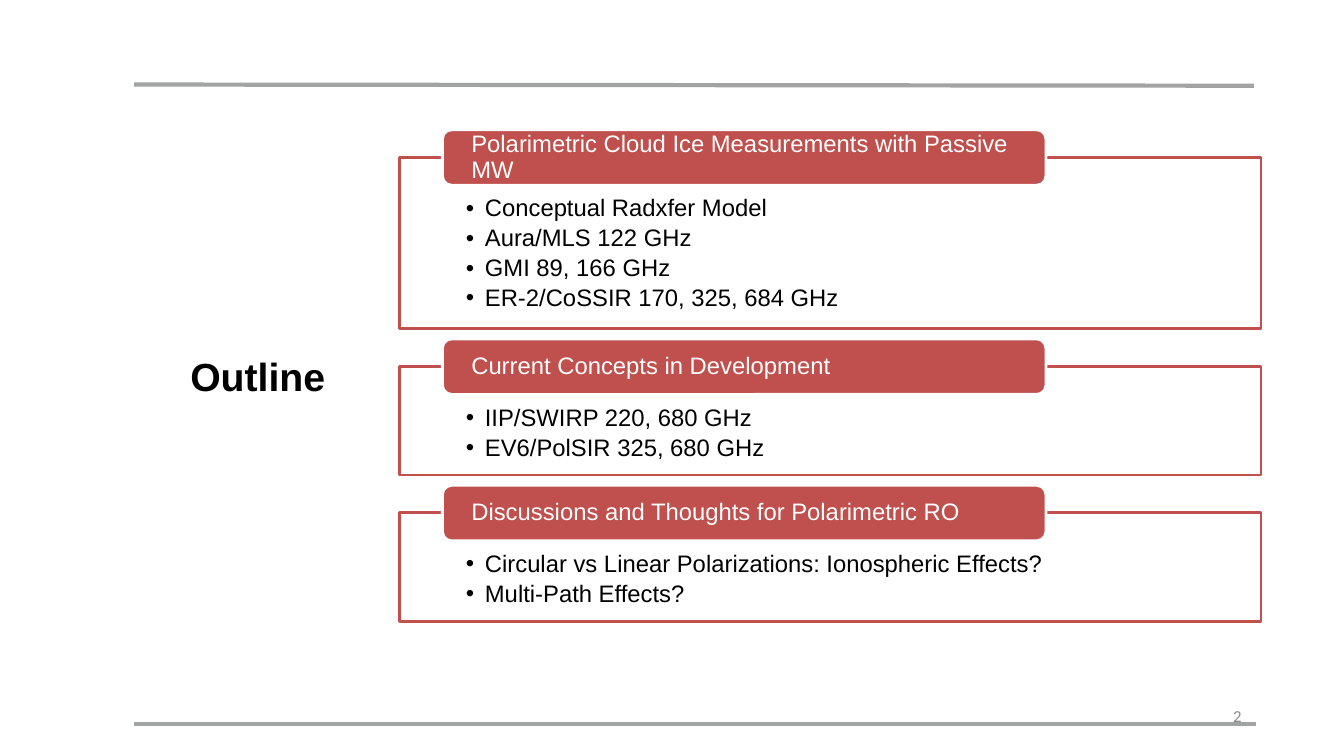
from dataclasses import dataclass

import pptx
import pptx.dml.color
import pptx.enum.shapes
import pptx.enum.text
import pptx.oxml
import pptx.oxml.ns
import pptx.util

Cm, Pt = pptx.util.Cm, pptx.util.Pt
PP_ALIGN, MSO_ANCHOR = pptx.enum.text.PP_ALIGN, pptx.enum.text.MSO_ANCHOR
MSO_SHAPE = pptx.enum.shapes.MSO_SHAPE

RED, WHITE, BLACK, RULE_GREY, NUMBER_GREY = "C0504D", "FFFFFF", "000000", "A1A4A3", "8B8B8B"
BOX_LEFT, BOX_WIDTH, FIRST_TOP, BOX_GAP = 10.06, 21.72, 3.96, 0.95
BOX_BASE, ITEM_HEIGHT = 1.16, 0.79
HEADER_LEFT, HEADER_WIDTH, HEADER_HEIGHT, HEADER_RISE = 11.15, 15.21, 1.4, 0.69


@dataclass
class Section:
    heading: str
    items: list[str]

    @property
    def height(self) -> float:
        return BOX_BASE + ITEM_HEIGHT * len(self.items)


@dataclass
class Rule:
    x1: float
    y1: float
    x2: float
    y2: float


SECTIONS = [
    Section("Polarimetric Cloud Ice Measurements with Passive MW",
            ["Conceptual Radxfer Model", "Aura/MLS 122 GHz", "GMI 89, 166 GHz",
             "ER-2/CoSSIR 170, 325, 684 GHz"]),
    Section("Current Concepts in Development",
            ["IIP/SWIRP 220, 680 GHz", "EV6/PolSIR 325, 680 GHz"]),
    Section("Discussions and Thoughts for Polarimetric RO",
            ["Circular vs Linear Polarizations: Ionospheric Effects?", "Multi-Path Effects?"]),
]
RULES = [Rule(3.38, 18.24, 31.65, 18.24), Rule(3.38, 2.13, 31.6, 2.16)]


def rgb(value: str) -> pptx.dml.color.RGBColor:
    return pptx.dml.color.RGBColor.from_string(value)


def xml(tag: str, content: str = "", attrs: str = ""):
    """Build one DrawingML element."""
    return pptx.oxml.parse_xml(f'<a:{tag} {pptx.oxml.ns.nsdecls("a")} {attrs}>{content}</a:{tag}>')


def apply(target, values: dict) -> None:
    for name, value in values.items():
        setattr(target, name, value)


def place(sp, left: float, top: float, width: float, height: float) -> None:
    apply(sp, {"left": Cm(left), "top": Cm(top), "width": Cm(width), "height": Cm(height)})


def set_frame(tf, anchor, left: float, top: float, right: float, bottom: float) -> None:
    apply(tf, {"word_wrap": True, "auto_size": pptx.enum.text.MSO_AUTO_SIZE.NONE,
               "vertical_anchor": anchor, "margin_left": Cm(left), "margin_top": Cm(top),
               "margin_right": Cm(right), "margin_bottom": Cm(bottom)})


def set_font(font, size: float, colour: str, bold: bool = False, name: str = "Arial") -> None:
    apply(font, {"size": Pt(size), "name": name, "bold": bold})
    font.color.rgb = rgb(colour)


def paint(sp, fill: str, line: str) -> None:
    sp.fill.solid()
    sp.fill.fore_color.rgb = rgb(fill)
    sp.line.color.rgb = rgb(line)
    sp.line.width = Pt(2)


def add_rule(s, rule: Rule) -> None:
    cx = s.shapes.add_connector(pptx.enum.shapes.MSO_CONNECTOR.STRAIGHT,
                                Cm(rule.x1), Cm(rule.y1), Cm(rule.x2), Cm(rule.y2))
    cx.line.color.rgb = rgb(RULE_GREY)
    cx.line.width = Pt(3)
    cx._element.spPr.append(xml("effectLst"))


def fill_list(sp, section: Section, top: float) -> None:
    """Turn a body placeholder into the outlined box with its bullets."""
    place(sp, BOX_LEFT, top, BOX_WIDTH, section.height)
    paint(sp, WHITE, RED)
    sp._element.spPr.find(".//" + pptx.oxml.ns.qn("a:srgbClr")).append(
        xml("alpha", attrs='val="90000"'))
    tf = sp.text_frame
    set_frame(tf, MSO_ANCHOR.TOP, 1.68, 0.99, 1.68, 0.33)
    for i, item in enumerate(section.items):
        p = tf.paragraphs[0] if i == 0 else tf.add_paragraph()
        pPr = p._p.get_or_add_pPr()
        pPr.set("marL", str(Cm(0.48)))
        pPr.set("indent", str(-Cm(0.48)))
        pPr.append(xml("buFont", attrs='typeface="Arial"'))
        pPr.append(xml("buChar", attrs='char="•"'))
        apply(p, {"level": 1, "line_spacing": 0.9, "space_before": Pt(0),
                  "space_after": Pt(3), "alignment": PP_ALIGN.LEFT})
        r = p.add_run()
        r.text = item
        set_font(r.font, 17, BLACK)


def add_header(s, heading: str, box_top: float) -> None:
    sp = s.shapes.add_shape(MSO_SHAPE.ROUNDED_RECTANGLE, Cm(HEADER_LEFT),
                            Cm(box_top - HEADER_RISE), Cm(HEADER_WIDTH), Cm(HEADER_HEIGHT))
    sp.shadow.inherit = False
    paint(sp, RED, WHITE)
    set_frame(sp.text_frame, MSO_ANCHOR.MIDDLE, 0.66, 0, 0.66, 0)
    p = sp.text_frame.paragraphs[0]
    apply(p, {"line_spacing": 0.9, "alignment": PP_ALIGN.LEFT})
    r = p.add_run()
    r.text = heading
    set_font(r.font, 17, WHITE)


def add_slide_number(s) -> None:
    sp = s.shapes.add_textbox(Cm(29.79), Cm(17.65), Cm(1.75), Cm(1.02))
    set_frame(sp.text_frame, MSO_ANCHOR.TOP, 0.25, 0.13, 0.25, 0.13)
    p = sp.text_frame.paragraphs[0]
    apply(p, {"alignment": PP_ALIGN.RIGHT, "space_after": Pt(6)})
    r = p.add_run()
    r.text = "2"
    set_font(r.font, 12, NUMBER_GREY, name="Calibri")


def set_title(sp, text: str) -> None:
    place(sp, 2.38, 2.82, 8.23, 13.31)
    set_frame(sp.text_frame, MSO_ANCHOR.MIDDLE, 0.25, 0.13, 0.25, 0.13)
    p = sp.text_frame.paragraphs[0]
    p.alignment = PP_ALIGN.CENTER
    r = p.add_run()
    r.text = text
    set_font(r.font, 28, BLACK, bold=True)


def main() -> None:
    prs = pptx.Presentation()
    prs.slide_width, prs.slide_height = Cm(33.87), Cm(19.05)
    s = prs.slides.add_slide(prs.slide_layouts.get_by_name("Comparison"))
    title, *bodies = s.placeholders
    set_title(title, "Outline")
    for rule in RULES:
        add_rule(s, rule)
    top = FIRST_TOP
    for body, section in zip(bodies, SECTIONS):
        fill_list(body, section, top)
        add_header(s, section.heading, top)
        top += section.height + BOX_GAP
    for spare in bodies[len(SECTIONS):]:
        spare._element.getparent().remove(spare._element)
    add_slide_number(s)
    prs.save("out.pptx")


if __name__ == "__main__":
    main()
